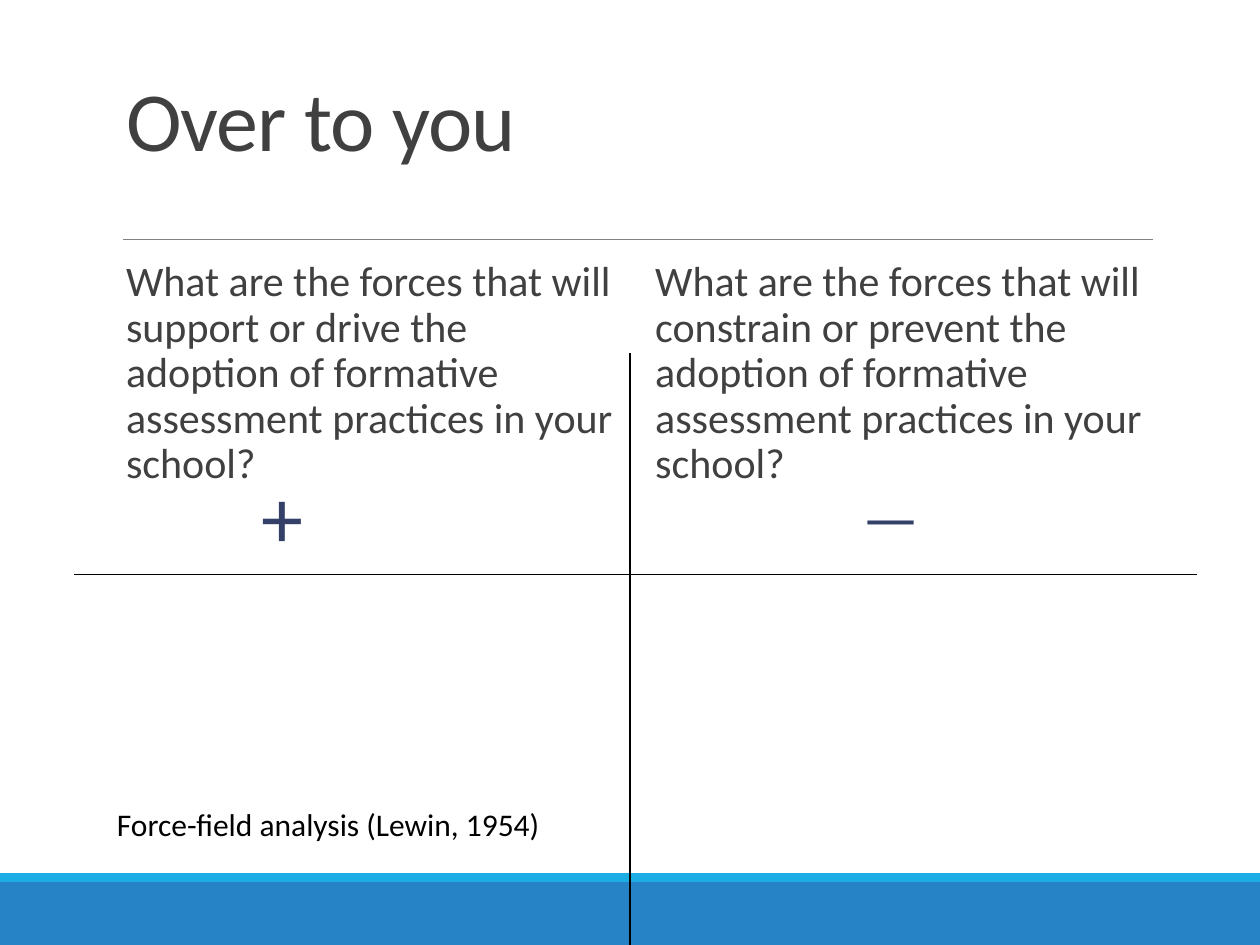
from pptx import Presentation
from pptx.dml.color import RGBColor
from pptx.enum.shapes import MSO_CONNECTOR, MSO_SHAPE
from pptx.enum.text import MSO_ANCHOR, MSO_AUTO_SIZE, PP_ALIGN
from pptx.oxml.ns import qn
from pptx.util import Inches, Pt
from lxml import etree

STRAIGHT = MSO_CONNECTOR.STRAIGHT
RECTANGLE = MSO_SHAPE.RECTANGLE
TOP, BOTTOM = MSO_ANCHOR.TOP, MSO_ANCHOR.BOTTOM
LEFT = PP_ALIGN.LEFT
NO_FIT = MSO_AUTO_SIZE.NONE
FIT_SHAPE = MSO_AUTO_SIZE.SHAPE_TO_FIT_TEXT

BLUE, CYAN = "2683C6", "1CADE4"
GRAY, DARK, NAVY, BLACK = "808080", "404040", "344068", "000000"


def color(value):
    return RGBColor.from_string(value)


class SlideBuilder:
    font = "Calibri"

    def __init__(self, slide):
        self.slide = slide

    def place(self, shape, left, top, width, height):
        shape.left, shape.top = Inches(left), Inches(top)
        shape.width, shape.height = Inches(width), Inches(height)

    def set_text(self, shape, text, size, ink):
        """Set one left-aligned paragraph and return it."""
        shape.text_frame.text = text
        para = shape.text_frame.paragraphs[0]
        para.alignment = LEFT
        font = para.runs[0].font
        font.name, font.size = self.font, Pt(size)
        font.color.rgb = color(ink)
        return para

    def title(self, text, *bounds):
        title = self.slide.shapes.title
        self.place(title, *bounds)
        para = self.set_text(title, text, 48, DARK)
        para.line_spacing = 0.85
        para.runs[0]._r.get_or_add_rPr().set("spc", "-50")
        title.text_frame.auto_size = NO_FIT
        title.text_frame.vertical_anchor = BOTTOM

    def band(self, fill, *bounds):
        band = self.slide.shapes.add_shape(RECTANGLE, *map(Inches, bounds))
        band.shadow.inherit = False
        band.fill.solid()
        band.fill.fore_color.rgb = color(fill)
        band.line.fill.background()

    def line(self, ink, width, *ends):
        line = self.slide.shapes.add_connector(STRAIGHT, *map(Inches, ends))
        line.line.color.rgb = color(ink)
        line.line.width = Pt(width)
        etree.SubElement(line._element.spPr, qn("a:effectLst"))

    def question(self, text, *bounds):
        box = self.slide.shapes.add_textbox(*map(Inches, bounds))
        frame = box.text_frame
        frame.word_wrap, frame.vertical_anchor = True, TOP
        frame.margin_left = frame.margin_right = 0
        para = self.set_text(box, text, 24, DARK)
        para.line_spacing = 0.9
        para.space_before, para.space_after = Pt(12), Pt(2)
        para._p.get_or_add_pPr().set("marL", str(Inches(0.1)))

    def label(self, text, size, ink, *bounds, wrap=False):
        box = self.slide.shapes.add_textbox(*map(Inches, bounds))
        box.text_frame.word_wrap = wrap
        box.text_frame.auto_size = FIT_SHAPE
        self.set_text(box, text, size, ink)


def main():
    deck = Presentation()
    deck.slide_width, deck.slide_height = Inches(10), Inches(7.5)
    page = SlideBuilder(deck.slides.add_slide(deck.slide_layouts[5]))

    page.band(BLUE, 0, 7, 10, 0.5)
    page.band(CYAN, 0, 6.93, 10, 0.07)
    page.line(GRAY, 0.5, 0.98, 1.9, 9.15, 1.9)
    page.title("Over to you", 0.9, 0.43, 8.25, 0.96)

    for left, effect in ((0.9, "support or drive"), (5.1, "constrain or prevent")):
        page.question(
            f"What are the forces that will {effect} the adoption of "
            "formative assessment practices in your school?",
            left, 2.02, 4.05, 4.4)

    page.line(BLACK, 1, 0.59, 4.56, 9.5, 4.56)
    page.line(BLACK, 1, 5, 2.8, 5, 7.5)
    page.label("+", 48, NAVY, 1.98, 3.64, 1.17, 0.9, wrap=True)
    page.label("—", 36, NAVY, 6.75, 3.74, 0.67, 0.71)
    page.label("Force-field analysis (Lewin, 1954)", 18, BLACK, 0.83, 6.34, 3.6, 0.4)

    deck.save("out.pptx")


if __name__ == "__main__":
    main()
